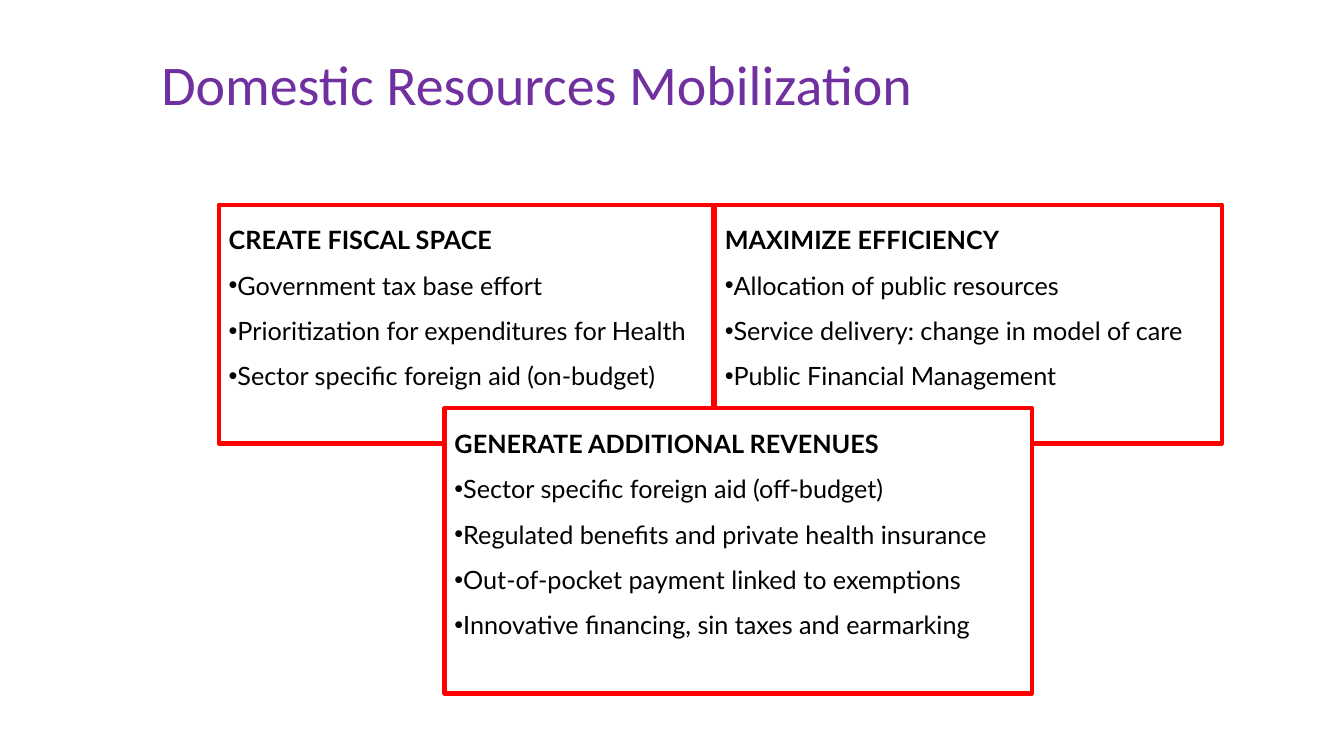
from dataclasses import dataclass

from lxml.etree import SubElement
from pptx import Presentation
from pptx.dml.color import RGBColor
from pptx.enum.shapes import MSO_SHAPE
from pptx.enum.text import MSO_ANCHOR, MSO_AUTO_SIZE, PP_ALIGN
from pptx.oxml.ns import qn
from pptx.slide import Slide
from pptx.util import Inches, Pt

SLIDE_WIDTH = Inches(13.33)
SLIDE_HEIGHT = Inches(7.5)


@dataclass(frozen=True)
class Area:
    """Rectangle in percent of the slide's width and height."""

    left: float
    top: float
    width: float
    height: float


@dataclass(frozen=True)
class Strategy:
    """Framed heading with its bulleted measures."""

    area: Area
    heading: str
    measures: tuple[str, ...]


TITLE_AREA = Area(11.25, 5.33, 67.52, 12.53)
UPPER_TOP, UPPER_HEIGHT = 27.07, 31.6

STRATEGIES = (
    Strategy(
        Area(16.28, UPPER_TOP, 36.76, UPPER_HEIGHT),
        "CREATE FISCAL SPACE",
        (
            "Government tax base effort",
            "Prioritization for expenditures for Health",
            "Sector specific foreign aid (on-budget)",
        ),
    ),
    Strategy(
        Area(53.19, UPPER_TOP, 37.73, UPPER_HEIGHT),
        "MAXIMIZE EFFICIENCY",
        (
            "Allocation of public resources",
            "Service delivery: change in model of care",
            "Public Financial Management",
        ),
    ),
    Strategy(
        Area(33.08, 54, 43.74, 37.73),
        "GENERATE ADDITIONAL REVENUES",
        (
            "Sector specific foreign aid (off-budget)",
            "Regulated benefits and private health insurance",
            "Out-of-pocket payment linked to exemptions",
            "Innovative financing, sin taxes and earmarking",
        ),
    ),
)


def color(hex_code: str) -> RGBColor:
    """Turn a hex string into a colour."""
    return RGBColor.from_string(hex_code)


def bounds(area: Area) -> tuple[int, int, int, int]:
    """Convert percentages into slide lengths."""
    return (
        round(SLIDE_WIDTH * area.left / 100),
        round(SLIDE_HEIGHT * area.top / 100),
        round(SLIDE_WIDTH * area.width / 100),
        round(SLIDE_HEIGHT * area.height / 100),
    )


def format_runs(paragraph, font_name: str, size: int, hex_code: str, bold: bool = False) -> None:
    """Format every run of a paragraph."""
    for run in paragraph.runs:
        run.font.name = font_name
        run.font.size = Pt(size)
        run.font.bold = bold
        run.font.color.rgb = color(hex_code)


def add_bullet(paragraph) -> None:
    """Put a round bullet directly before the text."""
    properties = paragraph._p.get_or_add_pPr()
    properties.set("marL", "0")
    properties.set("indent", "0")
    SubElement(properties, qn("a:buFont"), typeface="Arial")
    SubElement(properties, qn("a:buChar"), char="•")


def write_title(slide: Slide, wording: str) -> None:
    """Place and format the slide title."""
    title = slide.shapes.title
    title.left, title.top, title.width, title.height = bounds(TITLE_AREA)
    frame = title.text_frame
    frame.text = wording
    frame.auto_size = MSO_AUTO_SIZE.NONE
    frame.vertical_anchor = MSO_ANCHOR.MIDDLE
    heading = frame.paragraphs[0]
    heading.alignment = PP_ALIGN.LEFT
    heading.line_spacing = 0.9
    format_runs(heading, "Calibri", 40, "7030A0")


def draw_strategy(slide: Slide, strategy: Strategy) -> None:
    """Draw one red frame with its heading and measures."""
    box = slide.shapes.add_shape(MSO_SHAPE.RECTANGLE, *bounds(strategy.area))
    box.shadow.inherit = False
    box.fill.solid()
    box.fill.fore_color.rgb = color("FFFFFF")
    box.line.color.rgb = color("FF0000")
    box.line.width = Pt(3)
    frame = box.text_frame
    frame.text = "\n".join((strategy.heading, *strategy.measures))
    frame.word_wrap = False
    frame.auto_size = MSO_AUTO_SIZE.NONE
    frame.vertical_anchor = MSO_ANCHOR.TOP
    for index, paragraph in enumerate(frame.paragraphs):
        paragraph.alignment = PP_ALIGN.LEFT
        paragraph.line_spacing = 1.5
        format_runs(paragraph, "Lato", 18, "000000", bold=index == 0)
        if index > 0:
            add_bullet(paragraph)


def main() -> None:
    """Build and save the presentation."""
    presentation = Presentation()
    presentation.slide_width = SLIDE_WIDTH
    presentation.slide_height = SLIDE_HEIGHT
    slide = presentation.slides.add_slide(presentation.slide_layouts.get_by_name("Title Only"))
    write_title(slide, "Domestic Resources Mobilization")
    for strategy in STRATEGIES:
        draw_strategy(slide, strategy)
    presentation.save("out.pptx")


if __name__ == "__main__":
    main()
